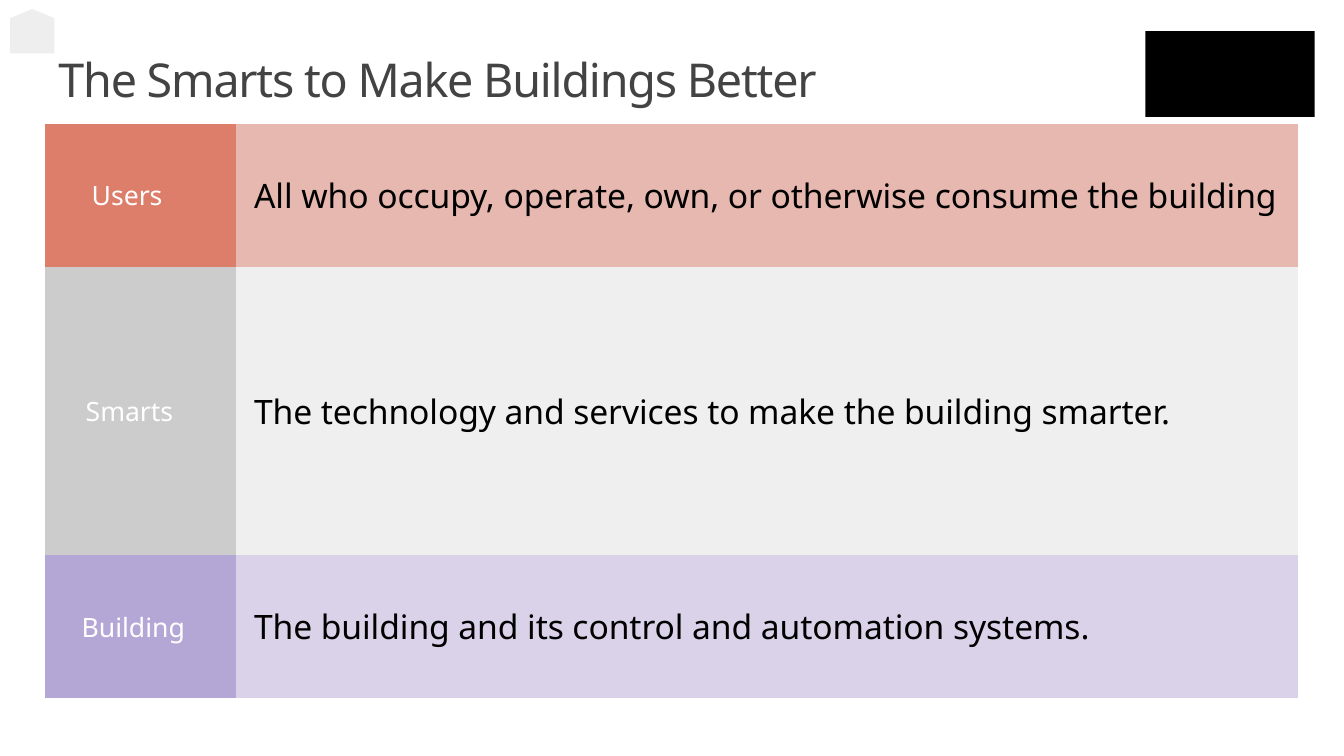
"""Builds the slide defining the users, smarts and building layers."""
from dataclasses import dataclass

from pptx import Presentation
from pptx import util as u
from pptx.dml.color import RGBColor
from pptx.enum import shapes, text
from pptx.oxml.ns import qn

FONT = "Noto Sans"
NO_STYLE = "{2D5ABB26-0587-4C30-8999-92F81FD0307C}"
COLORS = {
    "title": "434343", "label": "FFFFFF", "body": "000000",
    "house": "EEEEEE", "block": "000000",
    "users": "DD7E6B", "users_light": "E6B8AF",
    "smarts": "CCCCCC", "smarts_light": "EFEFEF",
    "building": "B4A7D6", "building_light": "D9D2E9",
}


@dataclass(frozen=True)
class Layer:
    key: str
    label: str
    indent: float
    description: str
    height: float


LAYERS = [
    Layer("users", "Users", 0.46,
          "All who occupy, operate, own, or otherwise consume the building", 1.42),
    Layer("smarts", "Smarts", 0.4,
          "The technology and services to make the building smarter.", 2.86),
    Layer("building", "Building", 0.36,
          "The building and its control and automation systems.", 1.42),
]


def set_fill(target, color: str) -> None:
    target.fill.solid()
    target.fill.fore_color.rgb = RGBColor.from_string(COLORS[color])


def finish_shape(sp, color: str) -> None:
    set_fill(sp, color)
    sp.line.fill.background()
    sp.shadow.inherit = False


def add_run(p, content: str, size: float, color: str, spacing: int) -> None:
    r = p.add_run()
    r.text = content
    r.font.name = FONT
    r.font.size = u.Pt(size)
    r.font.color.rgb = RGBColor.from_string(COLORS[color])
    r._r.get_or_add_rPr().set("spc", str(spacing))


def fill_cell(cell, content: str, indent: float, size: float,
              color: str, background: str, spacing: int) -> None:
    set_fill(cell, background)
    cell.vertical_anchor = text.MSO_ANCHOR.MIDDLE
    cell.margin_left = u.Inches(indent)
    cell.margin_right = cell.margin_top = cell.margin_bottom = 0
    add_run(cell.text_frame.paragraphs[0], content, size, color, spacing)


def add_house(s) -> None:
    outline = [(0.1, 0.18), (0.1, 0.53), (0.54, 0.53), (0.54, 0.18)]
    builder = s.shapes.build_freeform(u.Inches(0.32), u.Inches(0.09))
    builder.add_line_segments([(u.Inches(x), u.Inches(y)) for x, y in outline])
    finish_shape(builder.convert_to_shape(), "house")


def add_title(s) -> None:
    box = s.shapes.add_textbox(*map(u.Inches, (0.56, 0.51, 12.21, 0.56)))
    tf = box.text_frame
    tf.word_wrap = True
    tf.margin_left = u.Inches(0.02)
    tf.margin_right = tf.margin_top = tf.margin_bottom = 0
    add_run(tf.paragraphs[0], "The Smarts to Make Buildings Better", 33.3, "title", -90)


def add_layers(s) -> None:
    frame = s.shapes.add_table(
        len(LAYERS), 2, *map(u.Inches, (0.45, 1.23, 12.42, 5.7)))
    table = frame.table
    table.first_row = table.horz_banding = False
    table._tbl.tblPr.find(qn("a:tableStyleId")).text = NO_STYLE
    for column, width in zip(table.columns, (1.89, 10.53)):
        column.width = u.Inches(width)
    for row, layer in zip(table.rows, LAYERS):
        row.height = u.Inches(layer.height)
        label, description = row.cells
        fill_cell(label, layer.label, layer.indent, 19, "label", layer.key, 0)
        fill_cell(description, layer.description, 0.18, 24, "body",
                  f"{layer.key}_light", -5)


def main() -> None:
    prs = Presentation()
    prs.slide_width, prs.slide_height = u.Inches(13.33), u.Inches(7.5)
    s = prs.slides.add_slide(prs.slide_layouts[6])
    add_house(s)
    add_title(s)
    block = s.shapes.add_shape(
        shapes.MSO_SHAPE.RECTANGLE, *map(u.Inches, (11.36, 0.31, 1.68, 0.85)))
    finish_shape(block, "block")
    add_layers(s)
    prs.save("out.pptx")


if __name__ == "__main__":
    main()
